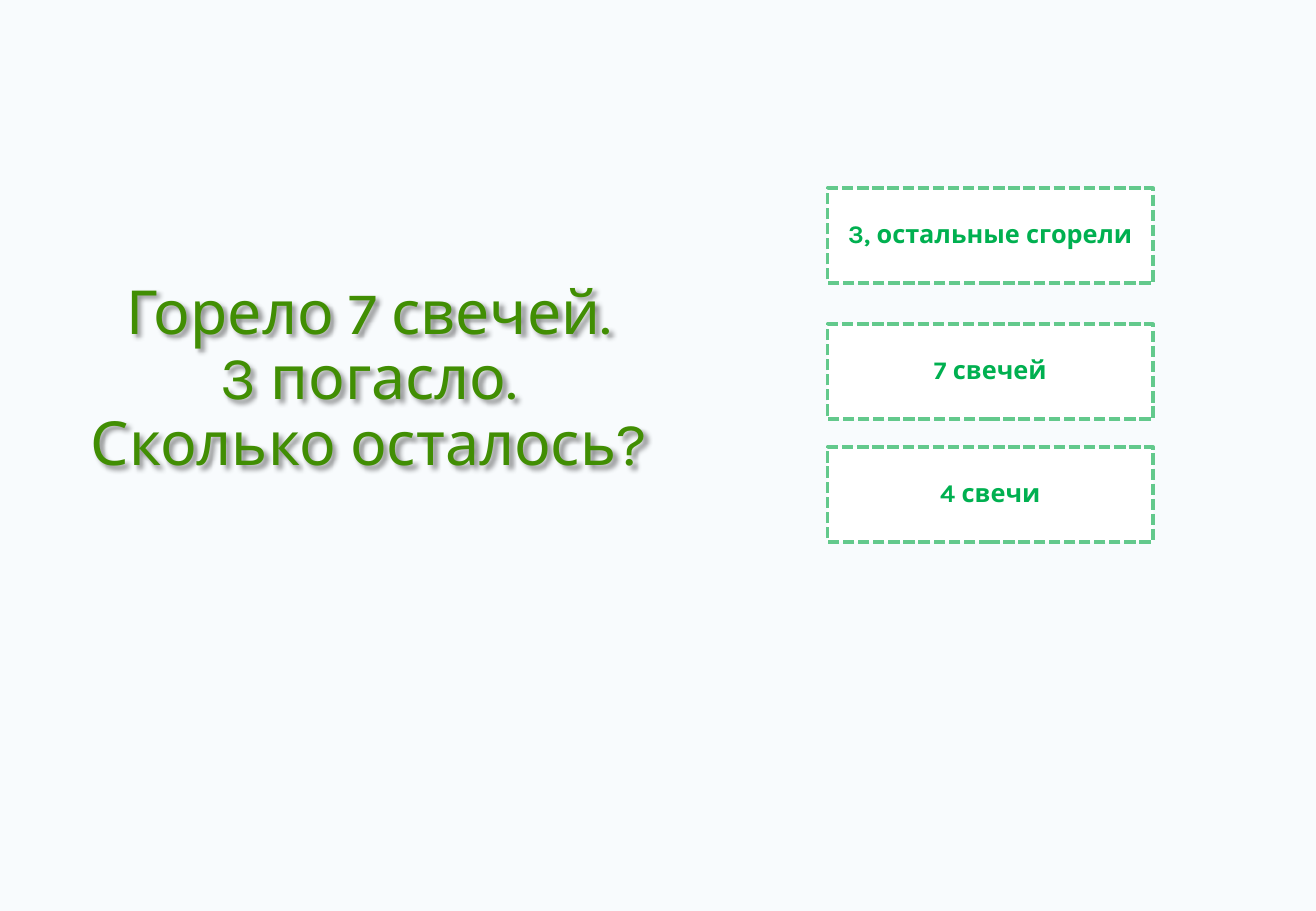
from dataclasses import dataclass

from lxml.etree import SubElement
from pptx import Presentation
from pptx.dml.color import RGBColor
from pptx.enum.dml import MSO_LINE
from pptx.enum.shapes import MSO_SHAPE
from pptx.enum.text import MSO_ANCHOR, PP_ALIGN
from pptx.oxml.ns import qn
from pptx.util import Inches, Pt


@dataclass(frozen=True)
class Theme:
    font: str = "Karla"
    background: RGBColor = RGBColor(0xF8, 0xFB, 0xFD)
    question: RGBColor = RGBColor(0x41, 0x8E, 0x03)
    answer: RGBColor = RGBColor(0x00, 0xB0, 0x50)
    answer_fill: RGBColor = RGBColor(0xFF, 0xFF, 0xFF)
    answer_border: RGBColor = RGBColor(0x63, 0xC9, 0x8C)
    question_size: Pt = Pt(36)
    answer_size: Pt = Pt(15)
    border_width: Pt = Pt(2.25)


THEME = Theme()
QUESTION = ["Горело 7 свечей.", "3 погасло.", "Сколько осталось?"]
# Each answer with its distance below the top of the answer column
ANSWERS = [("3, остальные сгорели", 0), ("7 свечей", 1.12), ("4 свечи", 2.13)]
ANSWER_HEIGHT = 0.78


def write_text(shape, text, size, color, bold=False):
    frame = shape.text_frame
    frame.word_wrap = True
    frame.vertical_anchor = MSO_ANCHOR.MIDDLE
    paragraph = frame.paragraphs[0]
    paragraph.text = text
    paragraph.alignment = PP_ALIGN.CENTER
    paragraph.line_spacing = 0.9
    paragraph.font.name = THEME.font
    paragraph.font.size = size
    paragraph.font.bold = bold
    paragraph.font.color.rgb = color


def add_soft_shadow(shape):
    effects = SubElement(shape._element.spPr, qn("a:effectLst"))
    shadow = SubElement(effects, qn("a:outerShdw"), blurRad="38100",
                        dist="38100", dir="2700000", algn="tl")
    color = SubElement(shadow, qn("a:srgbClr"), val="000000")
    SubElement(color, qn("a:alpha"), val="43000")


def add_question(slide, left, top, width, height):
    box = slide.shapes.add_textbox(
        Inches(left), Inches(top), Inches(width), Inches(height))
    write_text(box, "\v".join(QUESTION), THEME.question_size, THEME.question)
    add_soft_shadow(box)


def add_answers(slide, left, top, width):
    for text, offset in ANSWERS:
        card = slide.shapes.add_shape(
            MSO_SHAPE.RECTANGLE, Inches(left), Inches(top + offset),
            Inches(width), Inches(ANSWER_HEIGHT))
        card.shadow.inherit = False
        card.fill.solid()
        card.fill.fore_color.rgb = THEME.answer_fill
        card.line.color.rgb = THEME.answer_border
        card.line.width = THEME.border_width
        card.line.dash_style = MSO_LINE.SQUARE_DOT
        write_text(card, text, THEME.answer_size, THEME.answer, bold=True)


def main():
    presentation = Presentation()
    presentation.slide_width = Inches(10.83)
    presentation.slide_height = Inches(7.5)
    slide = presentation.slides.add_slide(presentation.slide_layouts[6])

    # Background
    slide.background.fill.solid()
    slide.background.fill.fore_color.rgb = THEME.background

    # Question on the left, answer choices on the right
    add_question(slide, 0.39, 1.79, 5.29, 2.68)
    add_answers(slide, 6.81, 1.55, 2.68)

    presentation.save("out.pptx")


if __name__ == "__main__":
    main()
